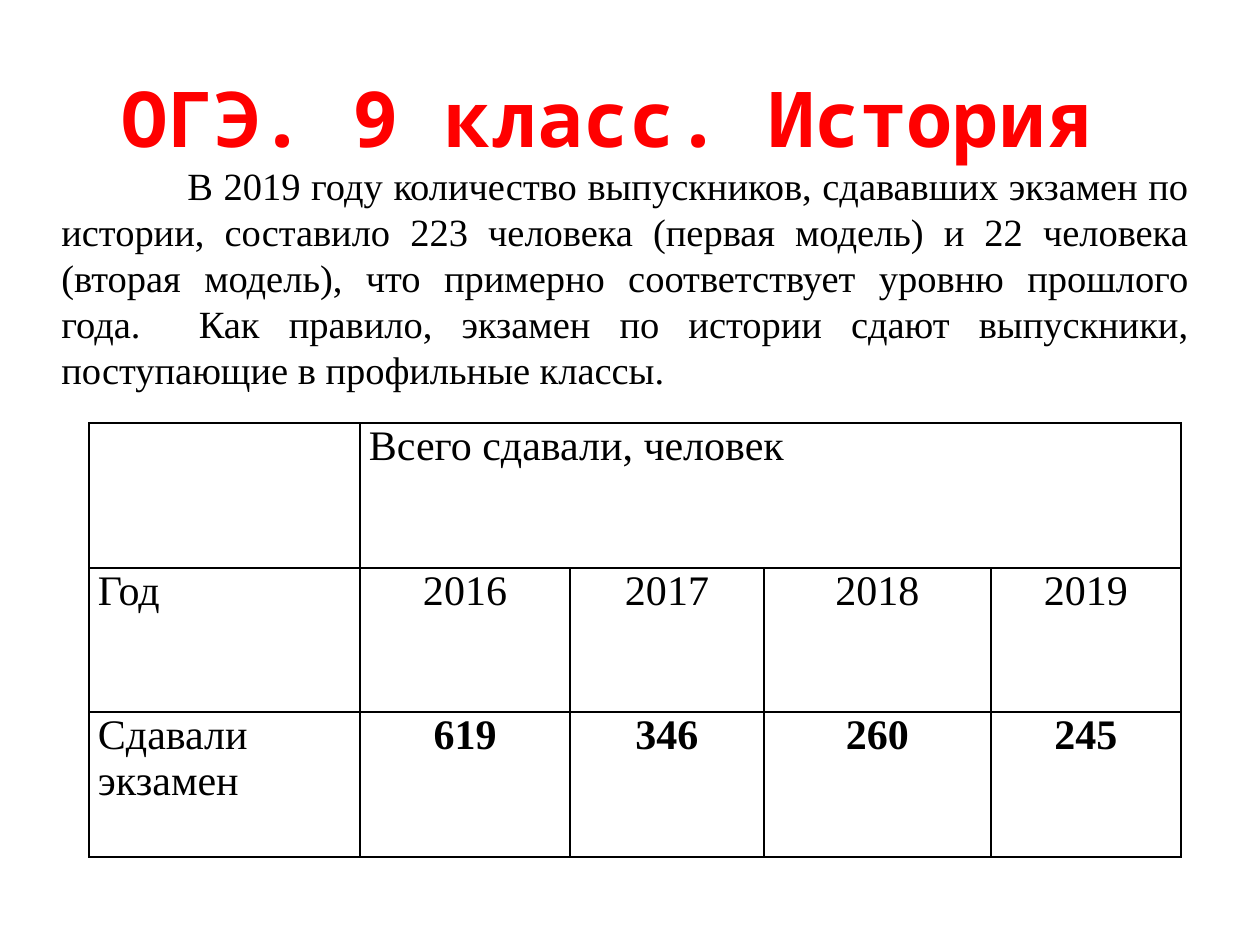
from lxml import etree
from pptx import Presentation
from pptx.dml.color import RGBColor
from pptx.enum.text import MSO_ANCHOR as Anchor, MSO_AUTO_SIZE as AutoSize, PP_ALIGN as Align
from pptx.oxml.ns import qn
from pptx.util import Emu, Pt

EMU_PER_PX = 914400 / 126
BLACK = RGBColor(0, 0, 0)
RED = RGBColor(255, 0, 0)
SERIF = "Times New Roman"
MONO = "Noto Sans Mono"


def px(length):
    return Emu(round(length * EMU_PER_PX))


def write_text(frame, text, size=24, font=SERIF, color=BLACK, bold=False,
               align=Align.JUSTIFY, indent=0):
    paragraph = frame.paragraphs[0]
    paragraph.alignment = align
    if indent:
        properties = paragraph._p.get_or_add_pPr()
        properties.set("marL", "0")
        properties.set("indent", str(px(indent)))
    run = paragraph.add_run()
    run.text = text
    run.font.size = Pt(size)
    run.font.name = font
    run.font.bold = bold
    run.font.color.rgb = color


class SlideBuilder:
    def __init__(self, slide, border_color=BLACK, border_width=1):
        self.slide = slide
        self.border_color = border_color
        self.border_width = border_width

    def title(self, text, left, top, width, height, **style):
        shape = self.slide.shapes.title
        shape.left, shape.top = px(left), px(top)
        shape.width, shape.height = px(width), px(height)
        frame = shape.text_frame
        frame.auto_size = AutoSize.NONE
        frame.vertical_anchor = Anchor.MIDDLE
        write_text(frame, text, **style)

    def text_box(self, text, left, top, width, height, bottom_margin=6, **style):
        shape = self.slide.shapes.add_textbox(px(left), px(top), px(width), px(height))
        frame = shape.text_frame
        frame.word_wrap = True
        frame.auto_size = AutoSize.SHAPE_TO_FIT_TEXT
        frame.vertical_anchor = Anchor.MIDDLE
        frame.margin_bottom = px(bottom_margin)
        write_text(frame, text, **style)

    def table(self, rows, left, top, column_widths, row_heights):
        shape = self.slide.shapes.add_table(
            len(rows), len(column_widths), px(left), px(top),
            px(sum(column_widths)), px(sum(row_heights)))
        table = shape.table
        table.first_row = table.horz_banding = False
        for column, width in zip(table.columns, column_widths):
            column.width = px(width)
        for row, height in zip(table.rows, row_heights):
            row.height = px(height)
        for row_index, values in enumerate(rows):
            for column_index, value in enumerate(values):
                cell = table.cell(row_index, column_index)
                self.format_cell(cell)
                if value:
                    is_number = value.isdigit()
                    write_text(cell.text_frame, value,
                               align=Align.CENTER if is_number else Align.JUSTIFY,
                               bold=is_number and row_index == len(rows) - 1)
        return table

    def format_cell(self, cell):
        cell.margin_left = cell.margin_right = px(9)
        cell.margin_top = cell.margin_bottom = 0
        cell.fill.background()
        properties = cell._tc.get_or_add_tcPr()
        for position, side in enumerate(("lnL", "lnR", "lnT", "lnB")):
            line = etree.Element(qn(f"a:{side}"), w=str(Pt(self.border_width)))
            fill = etree.SubElement(line, qn("a:solidFill"))
            etree.SubElement(fill, qn("a:srgbClr"), val=str(self.border_color))
            properties.insert(position, line)


def main():
    presentation = Presentation()
    presentation.slide_width, presentation.slide_height = px(1260), px(945)
    title_only = presentation.slide_layouts[5]
    builder = SlideBuilder(presentation.slides.add_slide(title_only))

    # Heading
    builder.title("ОГЭ. 9 класс. История ", 63, 38, 1134, 158,
                  size=44, font=MONO, color=RED, bold=True, align=Align.CENTER)

    # Exam counts by year
    table = builder.table(
        [["", "Всего сдавали, человек", "", "", ""],
         ["Год", "2016", "2017", "2018", "2019"],
         ["Сдавали экзамен", "619", "346", "260", "245"]],
        89, 423, column_widths=[271, 210, 194, 227, 190],
        row_heights=[145, 144, 145])
    table.cell(0, 1).merge(table.cell(0, 4))

    # Introduction
    builder.text_box(
        "В 2019 году количество выпускников, сдававших экзамен по истории, "
        "составило 223 человека (первая модель) и 22 человека (вторая модель), "
        "что примерно соответствует уровню прошлого года.  Как правило, экзамен "
        "по истории сдают выпускники, поступающие в профильные классы. ",
        49, 154, 1152, 285, bottom_margin=45, size=22, indent=126)

    presentation.save("out.pptx")


if __name__ == "__main__":
    main()
